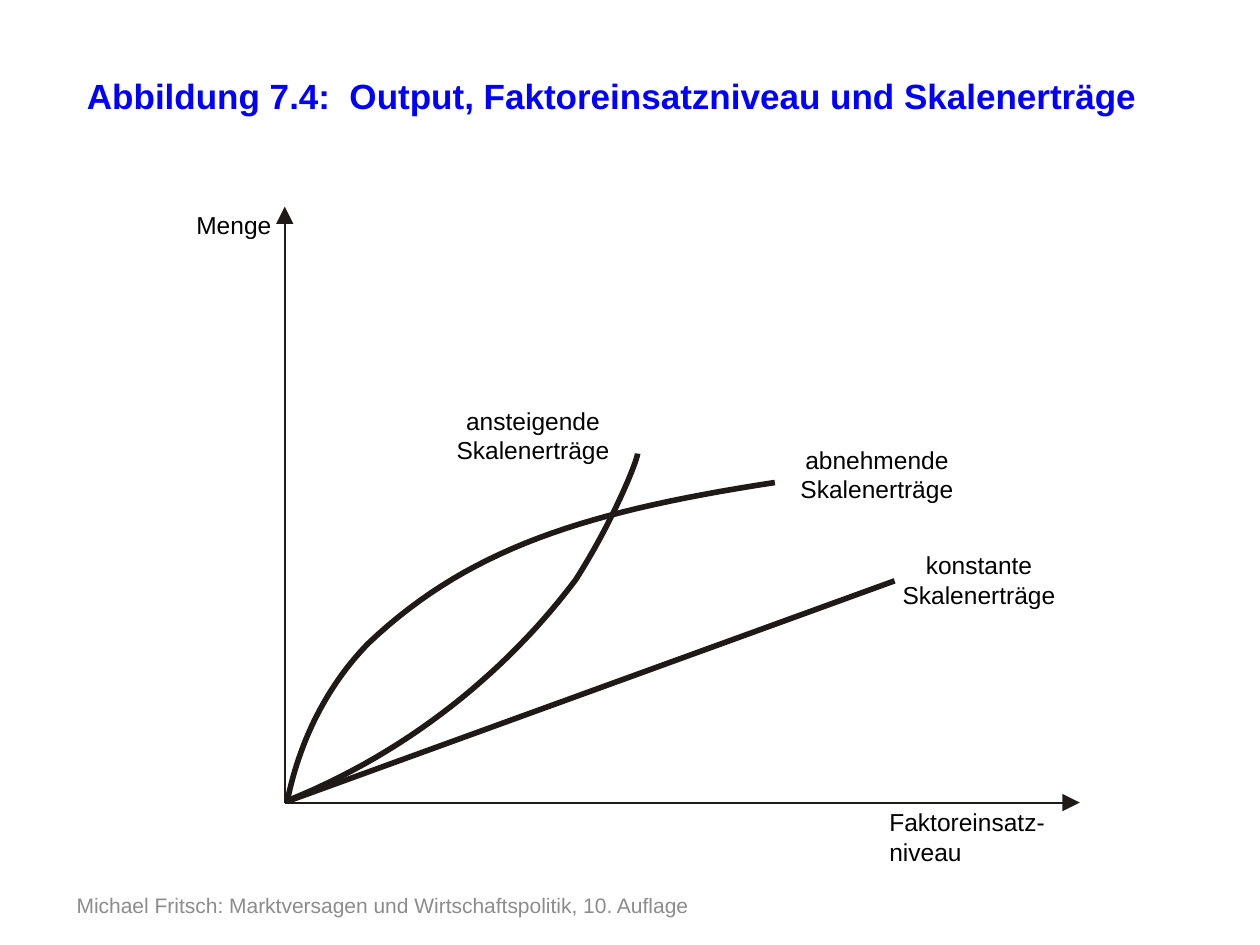
from lxml import etree
from pptx import Presentation
from pptx import util as u
from pptx.dml import color
from pptx.enum import shapes, text
from pptx.oxml import ns

COLORS = {"title": "0000FF", "label": "000000", "footer": "8C8C8C", "ink": "1F1A17"}
FONT = "Arial"
ORIGIN = (2.26, 6.37)
AXIS_ENDS = [(2.26, 1.64), (8.57, 6.37)]
CONSTANT_RETURNS = [(2.28, 6.36), (7.1, 4.61)]
INCREASING_RETURNS = [
    [(2.27, 6.36), (3.37, 5.92), (4.12, 5.2), (4.57, 4.6)],
    [(4.57, 4.6), (4.87, 4.13), (5.06, 3.65), (5.06, 3.6)],
]
DECREASING_RETURNS = [
    [(2.28, 6.36), (2.38, 5.87), (2.6, 5.44), (2.92, 5.11)],
    [(2.92, 5.11), (3.72, 4.35), (4.65, 4.06), (6.15, 3.83)],
]
LABELS = [
    ("Menge", (1.46, 1.62, 1.26, 0.34), text.PP_ALIGN.LEFT),
    ("Faktoreinsatz-niveau", (6.96, 6.36, 1.82, 0.57), text.PP_ALIGN.LEFT),
    ("ansteigende Skalenerträge", (3.32, 3.17, 1.82, 0.7), text.PP_ALIGN.CENTER),
    ("abnehmende Skalenerträge", (6.05, 3.48, 1.82, 0.7), text.PP_ALIGN.CENTER),
    ("konstante Skalenerträge", (6.86, 4.32, 1.82, 0.7), text.PP_ALIGN.CENTER),
]


def rgb(name):
    """Return the named palette colour."""
    return color.RGBColor.from_string(COLORS[name])


def inches(values):
    """Convert a sequence of numbers to inch lengths."""
    return [u.Inches(v) for v in values]


def write(sp, content, size=14, ink="label", bold=False,
          align=text.PP_ALIGN.LEFT, anchor=text.MSO_ANCHOR.TOP):
    """Fill a shape with one formatted paragraph."""
    tf = sp.text_frame
    tf.word_wrap = True
    tf.auto_size = text.MSO_AUTO_SIZE.NONE
    tf.vertical_anchor = anchor
    p = tf.paragraphs[0]
    p.alignment = align
    r = p.add_run()
    r.text = content
    r.font.name, r.font.size, r.font.bold = FONT, u.Pt(size), bold
    r.font.color.rgb = rgb(ink)


def add_title(s, box):
    """Place the figure title in the title placeholder."""
    sp = s.shapes.title
    sp.left, sp.top, sp.width, sp.height = inches(box)
    write(sp, "Abbildung 7.4:  Output, Faktoreinsatzniveau und Skalenerträge",
          size=20, ink="title", bold=True)


def add_footer(s, box):
    """Place the source line at the foot of the slide."""
    write(s.shapes.add_textbox(*inches(box)),
          "Michael Fritsch: Marktversagen und Wirtschaftspolitik, 10. Auflage",
          size=12, ink="footer", anchor=text.MSO_ANCHOR.MIDDLE)


def add_line(s, start, end, width, arrow=False):
    """Draw a straight line, optionally with an arrowhead at its end."""
    sp = s.shapes.add_connector(shapes.MSO_CONNECTOR.STRAIGHT, *inches(start + end))
    sp.line.color.rgb = rgb("ink")
    sp.line.width = u.Pt(width)
    if arrow:
        etree.SubElement(sp.line._get_or_add_ln(), ns.qn("a:tailEnd"),
                         type="triangle", w="lg", len="lg")
    etree.SubElement(sp._element.spPr, ns.qn("a:effectLst"))


def bezier(points, steps=30):
    """Sample a cubic Bézier curve given by four points."""
    for i in range(steps + 1):
        t = i / steps
        weights = ((1 - t) ** 3, 3 * t * (1 - t) ** 2, 3 * t * t * (1 - t), t ** 3)
        yield tuple(sum(w * pt[axis] for w, pt in zip(weights, points)) for axis in (0, 1))


def add_curve(s, segments, width):
    """Draw joined Bézier segments as one open freeform."""
    points = [inches(pt) for segment in segments for pt in bezier(segment)]
    builder = s.shapes.build_freeform(*points[0])
    builder.add_line_segments(points[1:], close=False)
    sp = builder.convert_to_shape()
    sp.shadow.inherit = False
    sp.fill.background()
    sp.line.color.rgb = rgb("ink")
    sp.line.width = u.Pt(width)


def add_diagram(s):
    """Draw the axes, the three output curves and their labels."""
    for end in AXIS_ENDS:
        add_line(s, ORIGIN, end, 1.2, arrow=True)
    add_line(s, *CONSTANT_RETURNS, 3.2)
    for segments in (INCREASING_RETURNS, DECREASING_RETURNS):
        add_curve(s, segments, 3.2)
    for content, box, align in LABELS:
        write(s.shapes.add_textbox(*inches(box)), content, align=align)


def main():
    """Build and save the slide."""
    prs = Presentation()
    prs.slide_width, prs.slide_height = inches((10, 7.5))
    s = prs.slides.add_slide(prs.slide_layouts[5])
    add_footer(s, (0.51, 6.98, 5.43, 0.4))
    add_title(s, (0.59, 0.54, 8.66, 0.44))
    add_diagram(s)
    prs.save("out.pptx")


if __name__ == "__main__":
    main()
